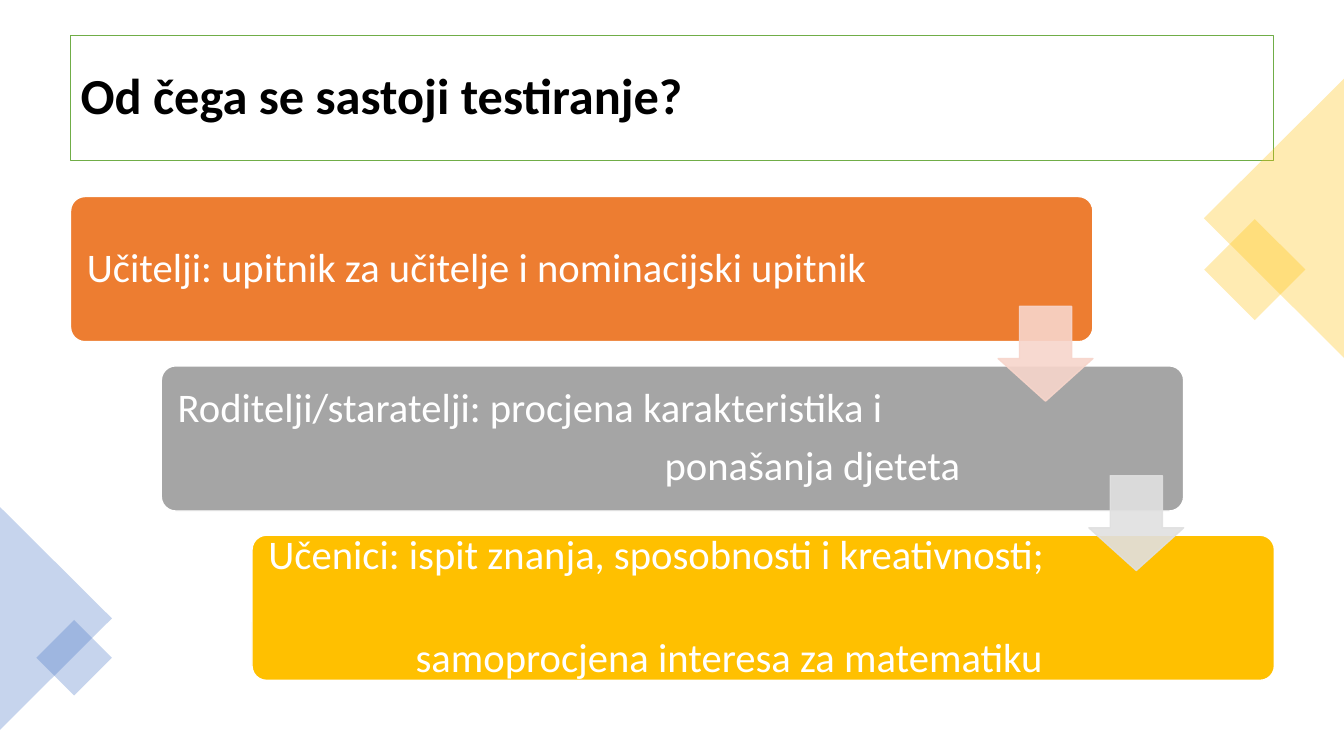
from pptx import Presentation
from pptx.dml.color import RGBColor
from pptx.enum.shapes import MSO_SHAPE
from pptx.enum.text import MSO_ANCHOR, MSO_AUTO_SIZE, PP_ALIGN
from pptx.oxml.ns import qn
from pptx.util import Inches, Pt
from lxml import etree

COLORS = {"white": "FFFFFF", "black": "000000", "green": "70AD47", "orange": "ED7D31",
          "gray": "A5A5A5", "gold": "FFC000", "blue": "4472C4",
          "pale_orange": "F7D5CB", "pale_gray": "E0E0E0"}


def paint(fill, color, alpha=100):
    fill.solid()
    fill.fore_color.rgb = RGBColor.from_string(COLORS[color])
    if alpha < 100:
        clr = fill._xPr.find(qn("a:solidFill"))[0]
        etree.SubElement(clr, qn("a:alpha")).set("val", str(alpha * 1000))


def add_shape(kind, left, top, width, height, color, alpha=100, line=None):
    sp = s.shapes.add_shape(kind, Inches(left), Inches(top), Inches(width), Inches(height))
    sp.shadow.inherit = False
    paint(sp.fill, color, alpha)
    if line:
        paint(sp.line.fill, line, alpha)
        sp.line.width = Pt(1)
    else:
        sp.line.fill.background()
    return sp


prs = Presentation()
prs.slide_width, prs.slide_height = Inches(13.33), Inches(7.5)
s = prs.slides.add_slide(prs.slide_layouts[5])

# Title
title = s.shapes.title
title.left, title.top = Inches(0.7), Inches(0.35)
title.width, title.height = Inches(11.93), Inches(1.24)
paint(title.fill, "white")
paint(title.line.fill, "green")
title.line.width = Pt(1)
tf = title.text_frame
tf.text = "Od čega se sastoji testiranje?"
tf.auto_size = MSO_AUTO_SIZE.NONE
tf.vertical_anchor = MSO_ANCHOR.MIDDLE
p = tf.paragraphs[0]
p.alignment = PP_ALIGN.LEFT
p.line_spacing = 0.9
p.font.name, p.font.size, p.font.bold = "Calibri", Pt(36), True
p.font.color.rgb = RGBColor.from_string(COLORS["black"])

# Translucent corner decorations
for kind, left, top, width, height, rotation, color in [
    (MSO_SHAPE.RECTANGLE, 12.09, 2.32, 0.71, 0.71, 45, "gold"),
    (MSO_SHAPE.ISOSCELES_TRIANGLE, 11.25, 1.47, 2.77, 1.39, 270, "gold"),
    (MSO_SHAPE.ISOSCELES_TRIANGLE, -0.55, 5.58, 2.21, 1.11, 90, "blue"),
    (MSO_SHAPE.RECTANGLE, 0.47, 6.26, 0.53, 0.53, 45, "blue"),
]:
    add_shape(kind, left, top, width, height, color, 30).rotation = rotation

# Staircase of steps: colour, lines, indent and space before the second line
steps = [
    ("orange", ["Učitelji: upitnik za učitelje i nominacijski upitnik"], 0, 0),
    ("gray", ["Roditelji/staratelji: procjena karakteristika i", "ponašanja djeteta"], 4.83, 10.2),
    ("gold", ["Učenici: ispit znanja, sposobnosti i kreativnosti;",
              "samoprocjena interesa za matematiku"], 1.46, 42),
]
STEP_X, STEP_Y = 0.9, 1.68
for i, (color, lines, indent, gap) in enumerate(steps):
    sp = add_shape(MSO_SHAPE.ROUNDED_RECTANGLE, 0.7 + i * STEP_X, 1.95 + i * STEP_Y,
                   10.14, 1.44, color, line="white")
    sp.adjustments[0] = 0.1
    tf = sp.text_frame
    tf.word_wrap = True
    tf.vertical_anchor = MSO_ANCHOR.MIDDLE
    tf.margin_left = tf.margin_top = tf.margin_bottom = Inches(0.12)
    tf.margin_right = Inches(1.6)
    tf.text = "\n".join(lines)
    for p in tf.paragraphs:
        p.alignment = PP_ALIGN.LEFT
        p.line_spacing = 0.9
        p.font.name, p.font.size = "Calibri", Pt(29)
        p.font.color.rgb = RGBColor.from_string(COLORS["white"])
    if len(lines) > 1:
        p.space_before = Pt(gap)
        p._p.get_or_add_pPr().set("marL", str(Inches(indent)))

# Arrows between the steps
for i, color in enumerate(["pale_orange", "pale_gray"]):
    arrow = add_shape(MSO_SHAPE.DOWN_ARROW, 9.9 + i * STEP_X, 3.04 + i * STEP_Y,
                      0.94, 0.94, color, 90, color)
    # Head length first, then shaft width
    arrow.adjustments[0], arrow.adjustments[1] = 0.55, 0.45

prs.save("out.pptx")
